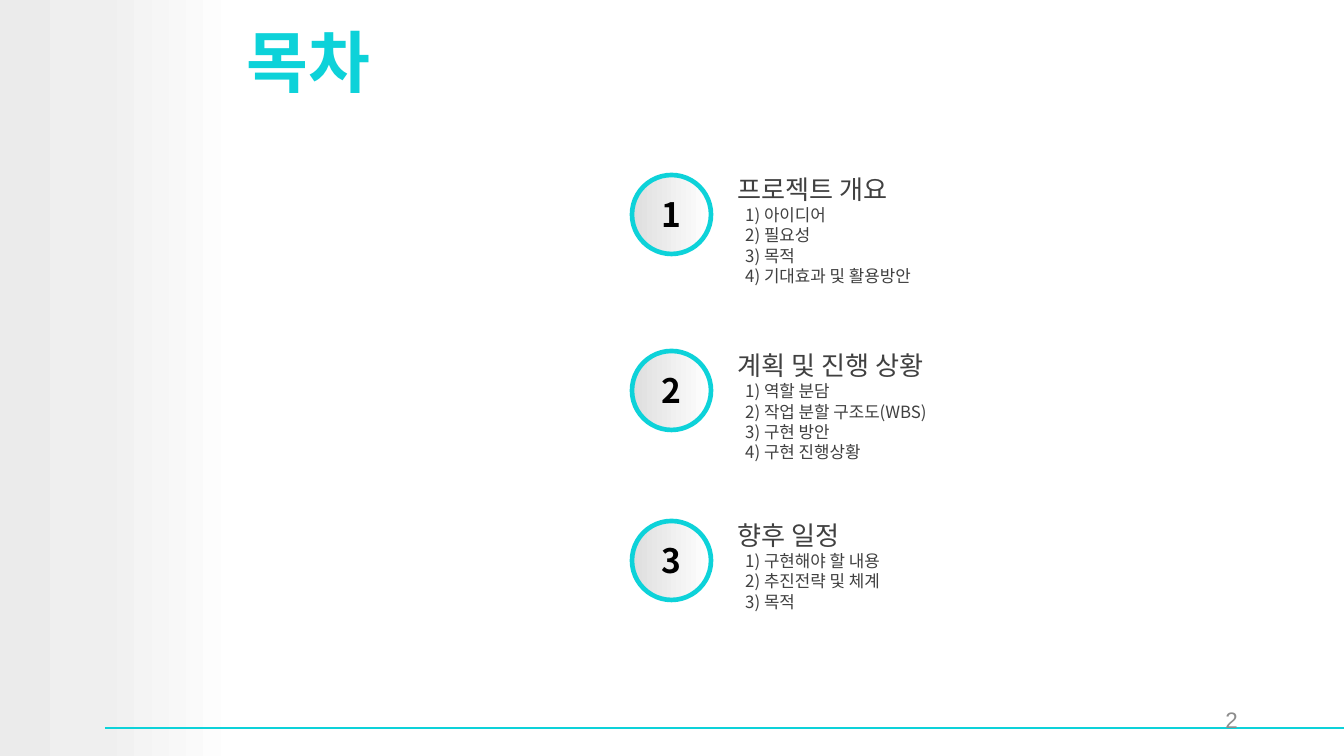
from copy import deepcopy

from lxml.etree import SubElement
from pptx import Presentation
from pptx.dml.color import RGBColor
from pptx.enum.shapes import MSO_CONNECTOR, MSO_SHAPE
from pptx.enum.text import MSO_ANCHOR, MSO_AUTO_SIZE, PP_ALIGN
from pptx.oxml.ns import qn
from pptx.util import Emu, Pt

SLIDE_WIDTH, SLIDE_HEIGHT = 1344, 756
EMU_PER_PX = 9144000 / SLIDE_WIDTH
KOREAN_FONT = "Noto Sans CJK KR"
CYAN = RGBColor(0x0D, 0xD2, 0xD9)
BLACK = RGBColor(0x00, 0x00, 0x00)
DARK_GRAY = RGBColor(0x40, 0x40, 0x40)
PAGE_GRAY = RGBColor(0x8C, 0x8C, 0x8C)
WHITE = RGBColor(0xFF, 0xFF, 0xFF)
PANEL_STOPS = [(0, RGBColor(0xEB, 0xEB, 0xEB)), (0.42, RGBColor(0xEF, 0xEF, 0xEF)), (1, WHITE)]
CIRCLE_STOPS = [(0, RGBColor(0xDE, 0xDE, 0xDE)), (1, WHITE)]
CIRCLE_LEFT, CIRCLE_SIZE = 632, 79
SECTIONS = [
    (175, 129, "프로젝트 개요", ["아이디어", "필요성", "목적", "기대효과 및 활용방안"]),
    (351, 126, "계획 및 진행 상황", ["역할 분담", "작업 분할 구조도(WBS)", "구현 방안", "구현 진행상황"]),
    (521, 109, "향후 일정", ["구현해야 할 내용", "추진전략 및 체계", "목적"]),
]


def px(length):
    """Turn pixels into EMU."""
    return Emu(round(length * EMU_PER_PX))


def box(*lengths):
    """Turn left, top, width and height into EMU."""
    return [px(length) for length in lengths]


def style_paragraph(paragraph, size, color, bold=False, align=PP_ALIGN.LEFT, name=KOREAN_FONT):
    """Set the alignment and font of a paragraph."""
    paragraph.alignment = align
    font = paragraph.font
    font.size, font.bold, font.name = Pt(size), bold, name
    font.color.rgb = color
    properties = paragraph._p.pPr.find(qn("a:defRPr"))
    SubElement(properties, qn("a:ea")).set("typeface", name)


def add_gradient_shape(shapes, kind, bounds, stops):
    """Add a shape without outline, filled from left to right."""
    shape = shapes.add_shape(kind, *box(*bounds))
    shape.shadow.inherit = False
    shape.line.fill.background()
    shape.fill.gradient()
    shape.fill.gradient_angle = 0
    stop_list = shape._element.spPr.find(".//" + qn("a:gsLst"))
    for _ in stops[2:]:
        stop_list.append(deepcopy(stop_list[-1]))
    for stop, (position, color) in zip(shape.fill.gradient_stops, stops):
        stop.position = position
        stop.color.rgb = color
    return shape


def add_text(shapes, bounds, text, anchor=MSO_ANCHOR.MIDDLE):
    """Add a wrapping text box and return its frame."""
    frame = shapes.add_textbox(*box(*bounds)).text_frame
    frame.word_wrap = True
    frame.vertical_anchor = anchor
    frame.text = text
    return frame


def add_background(slide):
    """Add the side panel and the bottom rule."""
    add_gradient_shape(slide.shapes, MSO_SHAPE.RECTANGLE, (0, 0, 238, SLIDE_HEIGHT), PANEL_STOPS)
    rule = slide.shapes.add_connector(MSO_CONNECTOR.STRAIGHT, *box(105, 728, SLIDE_WIDTH, 728))
    rule.line.color.rgb = CYAN
    rule.line.width = Pt(1)
    SubElement(rule._element.spPr, qn("a:effectLst"))


def add_title(slide, text):
    """Place and format the title in front of the background."""
    title = slide.shapes.title
    slide.shapes._spTree.append(title._element)
    title.left, title.top, title.width, title.height = box(233, 4, 1111, 114)
    frame = title.text_frame
    frame.text = text
    frame.auto_size = MSO_AUTO_SIZE.NONE
    frame.vertical_anchor = MSO_ANCHOR.MIDDLE
    style_paragraph(frame.paragraphs[0], 36, CYAN, bold=True)


def add_number(slide, top, number):
    """Add a numbered circle as a group."""
    group = slide.shapes.add_group_shape()
    bounds = (CIRCLE_LEFT, top, CIRCLE_SIZE, CIRCLE_SIZE)
    circle = add_gradient_shape(group.shapes, MSO_SHAPE.OVAL, bounds, CIRCLE_STOPS)
    circle.line.color.rgb = CYAN
    circle.line.width = Pt(2.5)
    frame = add_text(group.shapes, (CIRCLE_LEFT + 13, top + 12, 53, 54), str(number))
    style_paragraph(frame.paragraphs[0], 18, BLACK, bold=True, align=PP_ALIGN.CENTER)


def add_section(slide, top, height, heading, items):
    """Add a section heading with its numbered items."""
    frame = add_text(slide.shapes, (724, top - 8, 515, height), heading, MSO_ANCHOR.TOP)
    frame.auto_size = MSO_AUTO_SIZE.SHAPE_TO_FIT_TEXT
    style_paragraph(frame.paragraphs[0], 14, DARK_GRAY)
    for number, item in enumerate(items, 1):
        paragraph = frame.add_paragraph()
        paragraph.text = f"{number}) {item}"
        style_paragraph(paragraph, 9, DARK_GRAY)
        paragraph._p.pPr.set("marL", str(px(8)))


def add_page_number(slide, number):
    """Add the page number above the bottom rule."""
    frame = add_text(slide.shapes, (949, 700, 302, 40), str(number))
    style_paragraph(frame.paragraphs[0], 12, PAGE_GRAY, align=PP_ALIGN.RIGHT, name="Arial")


def main():
    """Build the table of contents slide."""
    presentation = Presentation()
    presentation.slide_width, presentation.slide_height = box(SLIDE_WIDTH, SLIDE_HEIGHT)
    slide = presentation.slides.add_slide(presentation.slide_layouts[5])
    add_background(slide)
    add_title(slide, "목차")
    for number, (top, height, heading, items) in enumerate(SECTIONS, 1):
        add_number(slide, top, number)
        add_section(slide, top, height, heading, items)
    add_page_number(slide, 2)
    presentation.save("out.pptx")


if __name__ == "__main__":
    main()
